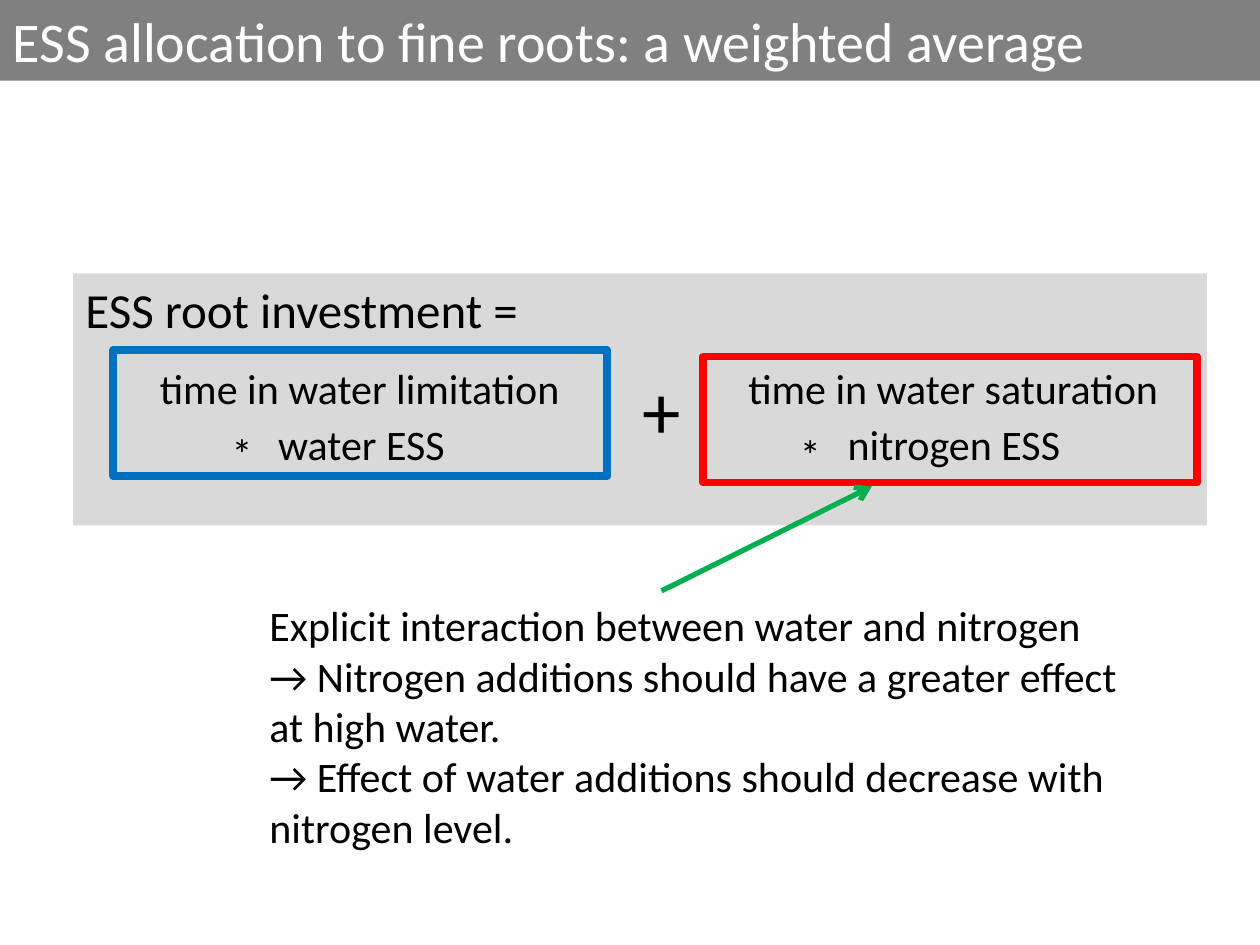
import pptx
import pptx.util
import pptx.dml.color
import pptx.enum.shapes
import pptx.enum.text
import pptx.oxml
import pptx.oxml.ns
from pptx.util import Inches

# Content: text, left, top, width, height, size, wrap
TITLE = "ESS allocation to fine roots: a weighted average"
FORMULA = "ESS root investment ="
LABELS = [
    ("+", 5, 2.83, 1.17, 0.84, 44, True),
    ("time in water saturation", 5.84, 2.83, 3.82, 0.5, 24, True),
    ("time in water limitation", 1.17, 2.83, 3.41, 0.5, 24, False),
    ("water ESS", 2.11, 3.27, 1.54, 0.5, 24, False),
    ("nitrogen ESS", 6.63, 3.27, 1.9, 0.5, 24, False),
    ("*", 1.74, 3.34, 0.37, 0.5, 24, False),
    ("*", 6.25, 3.35, 0.37, 0.5, 24, False),
    ("Explicit interaction between water and nitrogen\n"
     "→ Nitrogen additions should have a greater effect at high water.\n"
     "→ Effect of water additions should decrease with nitrogen level.",
     2.04, 4.71, 7.08, 2.12, 24, True),
]
# Term frames: left, top, line colour
FRAMES = [(5.58, 2.83, "FF0000"), (0.9, 2.78, "0070C0")]
FRAME_SIZE = (3.92, 1)


def color(value):
    return pptx.dml.color.RGBColor.from_string(value)


def set_text(shape, text, size, font_color="000000", wrap=True):
    frame = shape.text_frame
    frame.text = text
    frame.word_wrap = wrap
    frame.auto_size = pptx.enum.text.MSO_AUTO_SIZE.NONE
    frame.vertical_anchor = pptx.enum.text.MSO_ANCHOR.TOP
    for paragraph in frame.paragraphs:
        paragraph.alignment = pptx.enum.text.PP_ALIGN.LEFT
        for run in paragraph.runs:
            run.font.name = "Calibri"
            run.font.size = pptx.util.Pt(size)
            run.font.color.rgb = color(font_color)


def add_rectangle(slide, left, top, width, height, fill=None, line=None):
    shape = slide.shapes.add_shape(
        pptx.enum.shapes.MSO_SHAPE.RECTANGLE,
        Inches(left), Inches(top), Inches(width), Inches(height))
    shape.shadow.inherit = False
    if fill:
        shape.fill.solid()
        shape.fill.fore_color.rgb = color(fill)
    else:
        shape.fill.background()
    if line:
        shape.line.color.rgb = color(line)
        shape.line.width = pptx.util.Pt(4.5)
    else:
        shape.line.fill.background()
    return shape


def add_arrow(slide, start, end, line):
    arrow = slide.shapes.add_connector(
        pptx.enum.shapes.MSO_CONNECTOR.STRAIGHT,
        *(Inches(value) for value in start + end))
    arrow.line.color.rgb = color(line)
    arrow.line.width = pptx.util.Pt(3)
    head = pptx.oxml.parse_xml(
        '<a:tailEnd %s type="arrow"/>' % pptx.oxml.ns.nsdecls("a"))
    arrow.line._get_or_add_ln().append(head)
    arrow._element.spPr.append(
        pptx.oxml.parse_xml("<a:effectLst %s/>" % pptx.oxml.ns.nsdecls("a")))


def main():
    presentation = pptx.Presentation()
    presentation.slide_width = Inches(10)
    presentation.slide_height = Inches(7.5)
    slide = presentation.slides.add_slide(presentation.slide_layouts[5])

    # Title bar
    title = slide.shapes.title
    title.left, title.top = Inches(0), Inches(0)
    title.width, title.height = Inches(10), Inches(0.64)
    title.fill.solid()
    title.fill.fore_color.rgb = color("808080")
    set_text(title, TITLE, 32, "FFFFFF")

    # Formula panel and term frames
    panel = add_rectangle(slide, 0.58, 2.17, 9, 2, fill="D9D9D9")
    set_text(panel, FORMULA, 28)
    for left, top, line in FRAMES:
        add_rectangle(slide, left, top, *FRAME_SIZE, line=line)

    # Formula terms and conclusions
    for text, left, top, width, height, size, wrap in LABELS:
        label = slide.shapes.add_textbox(
            Inches(left), Inches(top), Inches(width), Inches(height))
        set_text(label, text, size, wrap=wrap)

    # Arrow from the conclusions to the saturation term
    add_arrow(slide, (5.25, 4.69), (6.92, 3.86), "00B050")

    presentation.save("out.pptx")


if __name__ == "__main__":
    main()
